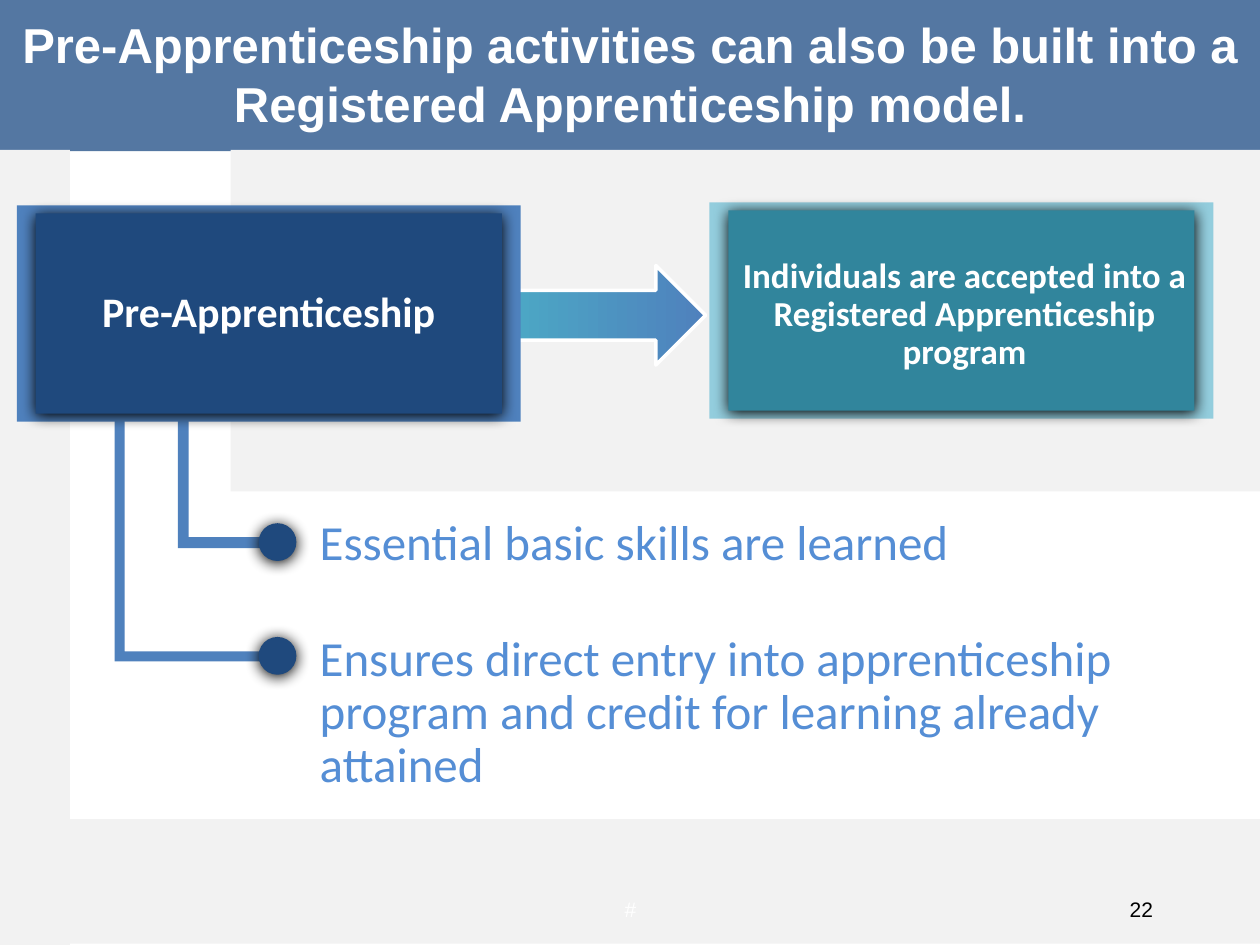
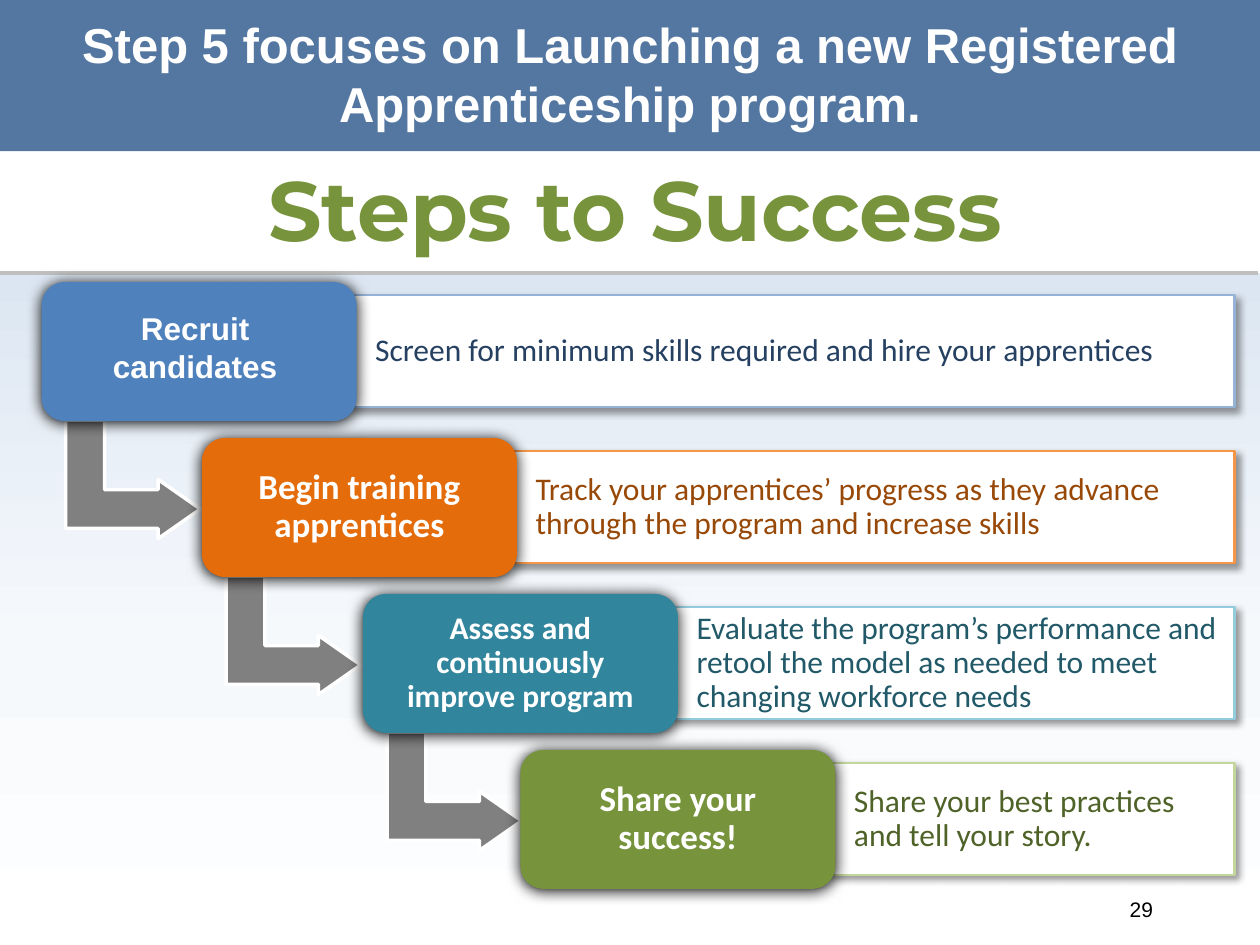
"""Builds two apprenticeship slides: a pre-apprenticeship flow and a staircase of launch steps."""
from dataclasses import dataclass

from pptx import Presentation
from pptx.dml.color import RGBColor
from pptx.enum.shapes import MSO_CONNECTOR, MSO_SHAPE as Kind
from pptx.enum.text import MSO_ANCHOR as Anchor, MSO_AUTO_SIZE, PP_ALIGN as Align
from pptx.oxml import parse_xml
from pptx.oxml.ns import nsdecls, qn
from pptx.util import Pt


@dataclass(frozen=True)
class Theme:
    """Colours, fonts and type sizes shared by the slides."""
    band: str = "376092"
    white: str = "FFFFFF"
    black: str = "000000"
    panel: str = "F2F2F2"
    rule: str = "BFBFBF"
    arrow: str = "808080"
    blue: str = "4F81BD"
    navy: str = "1F497D"
    sky: str = "558ED5"
    aqua: str = "4BACC6"
    pale_teal: str = "93CDDD"
    teal: str = "31859C"
    orange: str = "E46C0A"
    green: str = "77933C"
    heading_font: str = "Arial"
    body_font: str = "Calibri"
    display_font: str = "Montserrat"
    display: int = 48
    title: int = 28
    stage: int = 24
    label: int = 20
    body: int = 18
    footer: int = 12


THEME = Theme()
GLOW = (8.5, 1, 90, 100)
DROP = (4, 3, 45, 40)

FLOW_TITLE = "Pre-Apprenticeship activities can also be built into a Registered Apprenticeship model."
FLOW_PANELS = [(0, 468, 720, 71.3), (0, 85.7, 40, 454.3), (131.8, 85.7, 588.2, 195.1)]
FLOW_ELBOWS = [((87.8, 179.3, 67.7, 133.9), 0.091), ((39.8, 202.3, 114.5, 175.7), 0.05)]
FLOW_STAGES = [
    ("Pre-Apprenticeship", (9.6, 117.4), THEME.blue, THEME.navy, THEME.stage, (0, 1, 0, 0)),
    ("Individuals are accepted into a Registered Apprenticeship program", (405.4, 115.7),
     THEME.pale_teal, THEME.teal, THEME.label, (3.6, 5.4, 0, 0)),
]
FLOW_BENEFITS = [
    "Essential basic skills are learned",
    "Ensures direct entry into apprenticeship program and credit for learning already attained",
]

LAUNCH_TITLE = "Step 5 focuses on Launching a new Registered Apprenticeship program."
LAUNCH_HEADING = "Steps to Success"
LAUNCH_STEPS = [
    ("Recruit candidates", "Screen for minimum skills required and hire your apprentices",
     THEME.blue, "95B3D7", "254061", THEME.body, THEME.heading_font, 1.0, (18, 6, 22.6, 11.7)),
    ("Begin training apprentices",
     "Track your apprentices’ progress as they advance through the program and increase skills",
     THEME.orange, "F79646", "984807", THEME.label, THEME.body_font, 0.9, (20, 9, 20, 9)),
    ("Assess and continuously improve program",
     "Evaluate the program’s performance and retool the model as needed to meet changing workforce needs",
     THEME.teal, THEME.pale_teal, "215968", THEME.body, THEME.body_font, 0.9, (20, 9, 20, 9)),
    ("Share your success!", "Share your best practices and tell your story.",
     THEME.green, "C3D69B", "4F6228", THEME.label, THEME.body_font, 0.9, (20, 9, 20, 9)),
]
STEP_LEFTS = (23.8, 115.4, 207.4, 297.4)
STEP_TOP, STEP_DOWN = 161.2, 89.1
CARD_WIDTH, CARD_HEIGHT = 180, 79.4
DETAIL_RIGHT, DETAIL_HEIGHT = 705.6, 64.1


def color(value):
    """Turn a hex string into a colour."""
    return RGBColor.from_string(value)


def points(*values):
    """Turn numbers into lengths in points."""
    return [Pt(value) for value in values]


def add_block(page, kind, place, fill, line=None, shadow=None, adjust=()):
    """Add a preset shape with a plain fill, an optional (colour, width) line and a shadow."""
    block = page.shapes.add_shape(kind, *points(*place))
    block.shadow.inherit = False
    block.fill.solid()
    block.fill.fore_color.rgb = color(fill)
    if line:
        block.line.color.rgb = color(line[0])
        block.line.width = Pt(line[1])
    else:
        block.line.fill.background()
    for index, value in enumerate(adjust):
        block.adjustments[index] = value
    if shadow:
        blur, distance, angle, alpha = shadow
        block.element.spPr.find(qn("a:effectLst")).append(parse_xml(
            f'<a:outerShdw {nsdecls("a")} blurRad="{Pt(blur)}" dist="{Pt(distance)}" '
            f'dir="{angle * 60000}" algn="ctr" rotWithShape="0"><a:srgbClr val="{THEME.black}">'
            f'<a:alpha val="{alpha * 1000}"/></a:srgbClr></a:outerShdw>'))
    return block


def shade(block, stops, angle):
    """Replace the plain fill of a shape with a linear gradient."""
    marks = "".join(f'<a:gs pos="{place * 1000}"><a:srgbClr val="{value}"/></a:gs>'
                    for place, value in stops)
    properties = block.element.spPr
    properties.replace(properties.find(qn("a:solidFill")), parse_xml(
        f'<a:gradFill {nsdecls("a")} rotWithShape="1"><a:gsLst>{marks}</a:gsLst>'
        f'<a:lin ang="{angle * 60000}" scaled="0"/></a:gradFill>'))


def write(box, texts, size, ink, font=THEME.body_font, bold=False, align=Align.CENTER,
          spacing=1.0, gap=0, insets=(7.2, 3.6, 7.2, 3.6), anchor=Anchor.MIDDLE):
    """Fill a shape with one formatted paragraph for each text."""
    frame = box.text_frame
    frame.word_wrap = True
    frame.auto_size = MSO_AUTO_SIZE.NONE
    frame.vertical_anchor = anchor
    (frame.margin_left, frame.margin_top,
     frame.margin_right, frame.margin_bottom) = points(*insets)
    for index, text in enumerate(texts):
        para = frame.add_paragraph() if index else frame.paragraphs[0]
        para.alignment = align
        para.line_spacing = spacing
        para.space_before = Pt(gap if index else 0)
        span = para.add_run()
        span.text = text
        span.font.name = font
        span.font.size = Pt(size)
        span.font.bold = bold
        span.font.color.rgb = color(ink)


def add_text(page, place, text, size, ink, **style):
    """Add a text box with one paragraph."""
    write(page.shapes.add_textbox(*points(*place)), [text], size, ink, **style)


def add_page(deck, title):
    """Add a slide with the shared title."""
    page = deck.slides.add_slide(deck.slide_layouts[5])
    heading = page.shapes.title
    heading.left, heading.top, heading.width, heading.height = points(0, 0, 720, 84.2)
    write(heading, [title], THEME.title, THEME.white, font=THEME.heading_font, bold=True)
    return page


def add_number(page, number):
    """Add the page number above everything else on the slide."""
    add_text(page, (498.2, 505.4, 167.8, 28.8), number, THEME.footer, THEME.black,
             font=THEME.heading_font, align=Align.RIGHT)


def share_band(page):
    """Place the translucent title band on the layout, behind every slide."""
    band = add_block(page, Kind.RECTANGLE, (0, 0, 720, 86.4), THEME.band).element
    tint = band.spPr.find(qn("a:solidFill")).find(qn("a:srgbClr"))
    tint.append(parse_xml(f'<a:alpha {nsdecls("a")} val="85000"/>'))
    band.nvSpPr.cNvPr.set("id", "20")
    page.slide_layout.shapes.element.insert(2, band)


def draw_flow(page):
    """Draw the two stages, the arrow between them and the benefits below."""
    for place in FLOW_PANELS:
        add_block(page, Kind.RECTANGLE, place, THEME.panel)
    for place, thickness in FLOW_ELBOWS:
        elbow = add_block(page, Kind.BENT_UP_ARROW, place, THEME.blue,
                          adjust=(thickness, 0.25, 0.25))
        elbow.element.spPr.get_or_add_xfrm().set("flipH", "1")
    arrow = add_block(page, Kind.RIGHT_ARROW, (231.8, 151.7, 171.4, 56.9), THEME.blue,
                      line=(THEME.white, 2))
    shade(arrow, [(28, THEME.aqua), (100, THEME.blue)], 0)
    for text, (left, top), edge, fill, size, insets in FLOW_STAGES:
        add_block(page, Kind.RECTANGLE, (left, top, 288, 123.6), edge)
        stage = add_block(page, Kind.RECTANGLE, (left + 10.8, top + 4.5, 266.4, 114.5), fill,
                          shadow=GLOW)
        write(stage, [text], size, THEME.white, bold=True, spacing=0.9, insets=insets)
    benefits = page.shapes.add_textbox(*points(157.5, 291, 556.6, 167))
    write(benefits, FLOW_BENEFITS, THEME.title, THEME.sky, align=Align.LEFT, spacing=0.9,
          gap=36, insets=(25.2,) * 4)
    for index in range(len(FLOW_BENEFITS)):
        add_block(page, Kind.OVAL, (147.8, 299 + 65 * index, 21.6, 21.6), THEME.navy,
                  shadow=GLOW)
    add_text(page, (246.2, 505.4, 228.2, 28.8), "#", THEME.footer, THEME.white,
             font=THEME.heading_font)


def draw_steps(page):
    """Draw the heading and the staircase of steps with their details."""
    add_text(page, (23.8, 86.4, 678.2, 65.5), LAUNCH_HEADING, THEME.display, THEME.green,
             font=THEME.display_font, bold=True, anchor=Anchor.TOP)
    backdrop = add_block(page, Kind.RECTANGLE, (0, 156.2, 720, 383.8), THEME.white)
    shade(backdrop, [(0, THEME.white), (45, "F6F9FC"), (100, "DCE6F2")], 270)
    rule = page.shapes.add_connector(MSO_CONNECTOR.STRAIGHT, *points(0, 156.2, 719, 156.2))
    rule.line.color.rgb = color(THEME.rule)
    rule.line.width = Pt(2.25)
    rule.element.spPr.append(parse_xml(f'<a:effectLst {nsdecls("a")}/>'))
    for index, (left, step) in enumerate(zip(STEP_LEFTS, LAUNCH_STEPS)):
        name, detail, fill, edge, ink, size, font, spacing, insets = step
        top = STEP_TOP + STEP_DOWN * index
        if index < len(LAUNCH_STEPS) - 1:
            turn = add_block(page, Kind.BENT_UP_ARROW, (left + 18.4, top + 74.3, 67.7, 77),
                             THEME.arrow, line=(THEME.white, 2), adjust=(0.328, 0.25, 0.358))
            turn.rotation = 90
        start = left + 176.2
        panel = add_block(page, Kind.RECTANGLE,
                          (start, top + 7.4, DETAIL_RIGHT - start, DETAIL_HEIGHT),
                          THEME.white, line=(edge, 1.5), shadow=DROP)
        write(panel, [detail], THEME.body, ink, align=Align.LEFT, spacing=0.9,
              insets=(14.4, 3, 5, 3))
        card = add_block(page, Kind.ROUNDED_RECTANGLE, (left, top, CARD_WIDTH, CARD_HEIGHT),
                         fill, shadow=GLOW)
        write(card, [name], size, THEME.white, font=font, bold=True, spacing=spacing,
              insets=insets)


def main():
    """Build and save the deck."""
    deck = Presentation()
    deck.slide_width, deck.slide_height = points(720, 540)
    flow = add_page(deck, FLOW_TITLE)
    share_band(flow)
    draw_flow(flow)
    add_number(flow, "22")
    launch = add_page(deck, LAUNCH_TITLE)
    draw_steps(launch)
    add_number(launch, "29")
    deck.save("out.pptx")


if __name__ == "__main__":
    main()
